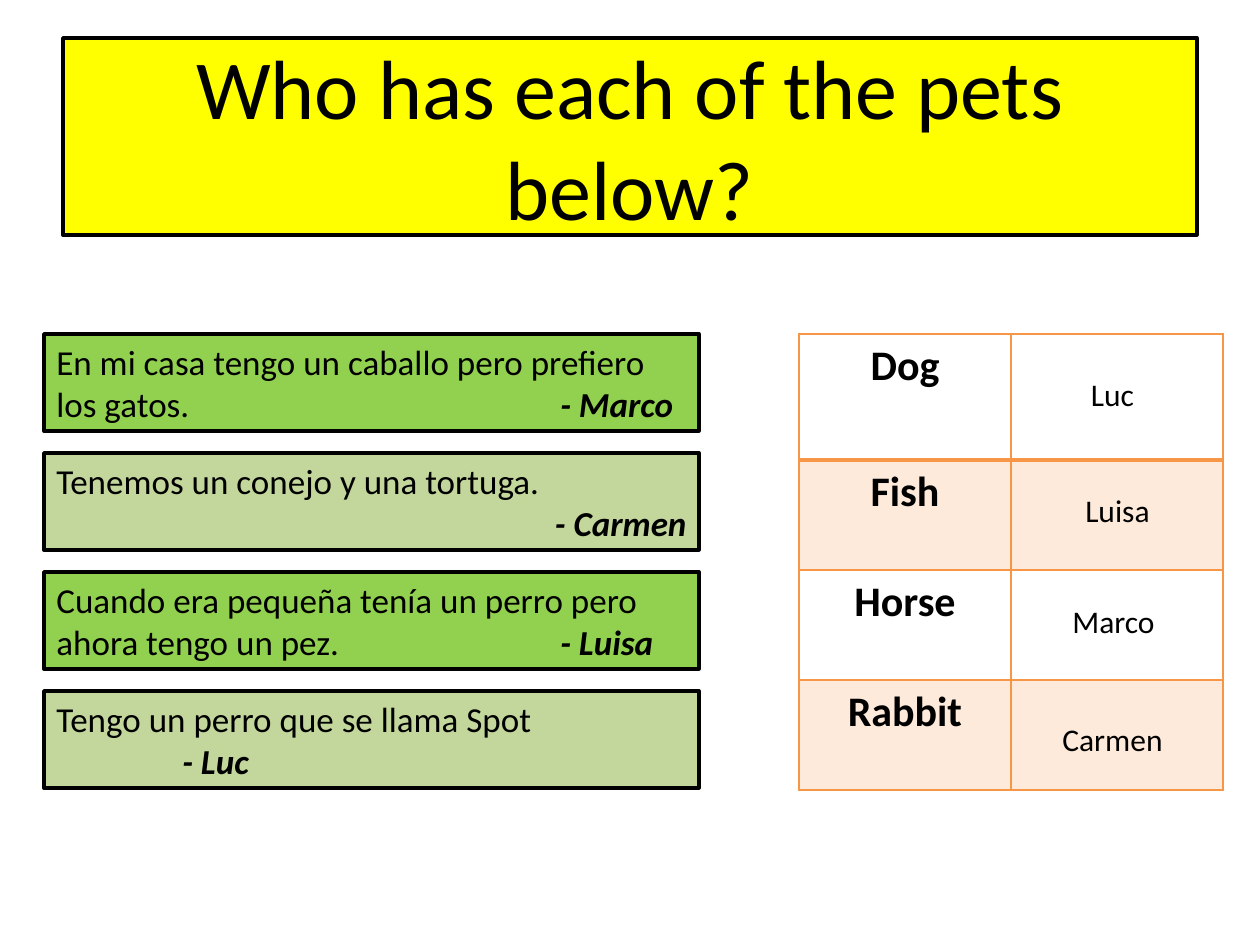
from lxml.etree import SubElement
from pptx import Presentation
from pptx.dml.color import RGBColor
from pptx.enum.shapes import MSO_SHAPE
from pptx.enum.text import MSO_ANCHOR, PP_ALIGN
from pptx.oxml import parse_xml
from pptx.oxml.ns import nsdecls, qn
from pptx.util import Pt

PX = 914400 / 126
LEFT, MID, RIGHT = PP_ALIGN.LEFT, PP_ALIGN.CENTER, PP_ALIGN.RIGHT
PLAIN = {"name": "Calibri", "bold": False, "italic": False}
TITLE = {**PLAIN, "size": Pt(48)}
QUOTE = {**PLAIN, "size": Pt(20)}
NAME = {**QUOTE, "bold": True, "italic": True}
PET = {**PLAIN, "size": Pt(24), "bold": True}
OWNER = {**PLAIN, "size": Pt(18)}


def emu(*sizes):
    """Turn px lengths into EMU."""
    return [round(size * PX) for size in sizes]


def paint(part, color):
    """Give a fill or font part a solid colour."""
    part.solid()
    part.fore_color.rgb = RGBColor.from_string(color)


def write(para, runs, align=LEFT):
    """Add runs of (text, format) to a paragraph."""
    para.alignment = align
    for text, look in runs:
        run = para.add_run()
        run.text = text
        for key, value in look.items():
            setattr(run.font, key, value)
        paint(run.font.fill, "000000")


def panel(slide, box, color, anchor):
    """Draw a filled rectangle with a black edge and return its text frame."""
    shape = slide.shapes.add_shape(MSO_SHAPE.RECTANGLE, *emu(*box))
    shape.shadow.inherit = False
    paint(shape.fill, color)
    paint(shape.line.fill, "000000")
    shape.line.width = Pt(2)
    frame = shape.text_frame
    frame.word_wrap = True
    frame.vertical_anchor = anchor
    return frame


def title(slide, box):
    """Place the heading."""
    frame = panel(slide, box, "FFFF00", MSO_ANCHOR.MIDDLE)
    write(frame.paragraphs[0], [("Who has each of the pets below?", TITLE)], MID)


def tab(para, stop):
    """Set one left tab stop."""
    stops = SubElement(para._p.get_or_add_pPr(), qn("a:tabLst"))
    SubElement(stops, qn("a:tab"), pos=str(emu(stop)[0]), algn="l")


def quotes(slide, box, items):
    """Stack the quotes with equal gaps in alternating greens."""
    x, y, w, h = box
    gap = 22
    high = (h - gap * (len(items) - 1)) / len(items)
    for i, (text, name, lead, stop) in enumerate(items):
        color = ("92D050", "C3D69B")[i % 2]
        spot = (x, y + i * (high + gap), w, high)
        frame = panel(slide, spot, color, MSO_ANCHOR.TOP)
        para = frame.paragraphs[0]
        if stop:
            tab(para, stop)
            write(para, [(text, QUOTE)])
            if lead:
                para.add_line_break()
            write(para, [("\t", QUOTE), (name, NAME)])
        else:
            write(para, [(text, QUOTE)])
            write(frame.add_paragraph(), [(name, NAME)], RIGHT)


def edge(cell, sides):
    """Draw orange cell borders from a dict of side to point width."""
    props = cell._tc.get_or_add_tcPr()
    for i, (side, width) in enumerate(sides.items()):
        props.insert(i, parse_xml(
            f'<a:ln{side} {nsdecls("a")} w="{Pt(width)}"><a:solidFill>'
            f'<a:srgbClr val="F79646"/></a:solidFill></a:ln{side}>'))


def pets(slide, box, rows, names):
    """Draw the pet table."""
    x, y, w, h = box
    grid = slide.shapes.add_table(len(names), 2, *emu(x, y, w, h)).table
    grid.first_row = grid.horz_banding = False
    for col in grid.columns:
        col.width = emu(w / 2)[0]
    for i, (name, high) in enumerate(zip(names, rows)):
        grid.rows[i].height = emu(high)[0]
        for cell in grid.rows[i].cells:
            if i % 2:
                paint(cell.fill, "FDEADA")
            else:
                cell.fill.background()
            edge(cell, {"L": 1, "R": 1, "T": 2 if i == 1 else 1,
                        "B": 1 if i else 2})
        write(grid.cell(i, 0).text_frame.paragraphs[0], [(name, PET)], MID)


def owners(slide, box, items):
    """Place owner names at offsets within the answer column."""
    x, y, w, h = box
    for name, dx, dy in items:
        label = slide.shapes.add_textbox(*emu(x + dx, y + dy, w, h))
        label.text_frame.word_wrap = True
        write(label.text_frame.paragraphs[0], [(name, OWNER)], MID)


def main():
    """Build and save the slide."""
    deck = Presentation()
    deck.slide_width, deck.slide_height = emu(1260, 945)
    slide = deck.slides.add_slide(deck.slide_layouts[6])
    title(slide, (63, 38, 1134, 197))
    pets(slide, (799, 334, 424, 456), (126, 110, 110, 110),
         ("Dog", "Fish", "Horse", "Rabbit"))
    quotes(slide, (44, 334, 655, 454), (
        ("En mi casa tengo un caballo pero prefiero los gatos.",
         "- Marco", False, 504),
        ("Tenemos un conejo y una tortuga.", "- Carmen", False, 0),
        ("Cuando era pequeña tenía un perro pero ahora tengo un pez.",
         "- Luisa", False, 504),
        ("Tengo un perro que se llama Spot", "- Luc", True, 126)))
    owners(slide, (1028, 369, 169, 50), (
        ("Luc", 0, 0), ("Luisa", 5, 116), ("Marco", 1, 227), ("Carmen", 0, 345)))
    deck.save("out.pptx")


if __name__ == "__main__":
    main()
